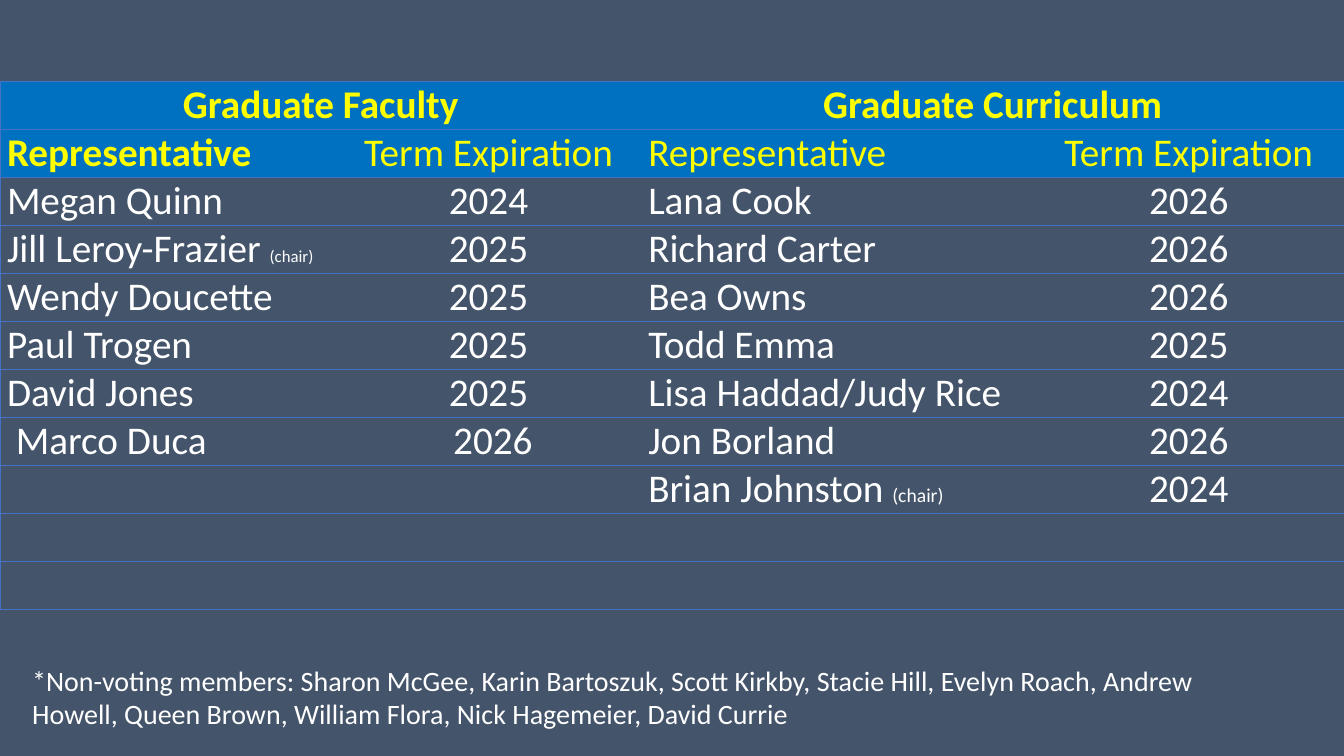
from lxml import etree
from pptx import Presentation
from pptx.dml.color import RGBColor
from pptx.enum.text import MSO_AUTO_SIZE, PP_ALIGN
from pptx.oxml.ns import qn
from pptx.util import Inches, Pt

LEFT, CENTER = PP_ALIGN.LEFT, PP_ALIGN.CENTER
FIT_SHAPE = MSO_AUTO_SIZE.SHAPE_TO_FIT_TEXT

SLATE = RGBColor(0x44, 0x54, 0x6A)
HEADER_BLUE = RGBColor(0x00, 0x70, 0xC0)
BORDER_BLUE = RGBColor(0x44, 0x72, 0xC4)
YELLOW = RGBColor(0xFF, 0xFF, 0x00)
WHITE = RGBColor(0xFF, 0xFF, 0xFF)

FONT = "Calibri"
TABLE_SIZE = 28
SLIDE_WIDTH, SLIDE_HEIGHT = 13.33, 7.5
TABLE_TOP, TABLE_HEIGHT = 0.81, 5.13
COLUMN_WIDTHS = (3.33, 3.03, 3.89, 3.08)
ROW_HEIGHT = 0.44
HEADER_ROWS = 2
CHAIR = "(chair)"

# A tuple holds a name, a small suffix and the size of that suffix
ROWS = [
    ("Graduate Faculty", "", "Graduate Curriculum", ""),
    ("Representative", "Term Expiration", "Representative", "Term Expiration"),
    ("Megan Quinn", "2024", "Lana Cook", "2026"),
    (("Jill Leroy-Frazier ", CHAIR, 12), "2025", "Richard Carter", "2026"),
    ("Wendy Doucette", "2025", "Bea Owns", "2026"),
    ("Paul Trogen", "2025", "Todd Emma", "2025"),
    ("David Jones", "2025", "Lisa Haddad/Judy Rice", "2024"),
    (" Marco Duca", " 2026", "Jon Borland", "2026"),
    ("", "", ("Brian Johnston ", CHAIR, 14), "2024"),
    ("", "", "", ""),
    ("", "", "", ""),
]
NON_VOTING = (
    "*Non-voting members: Sharon McGee, Karin Bartoszuk, Scott Kirkby, "
    "Stacie Hill, Evelyn Roach, Andrew Howell, Queen Brown, William Flora, "
    "Nick Hagemeier, David Currie"
)


def add_text(paragraph, text, size=TABLE_SIZE, color=WHITE, bold=False,
             align=LEFT):
    paragraph.alignment = align
    run = paragraph.add_run()
    run.text = text
    run.font.name = FONT
    run.font.size = Pt(size)
    run.font.bold = bold
    run.font.color.rgb = color


def set_borders(cell, visible_sides):
    """Draw the visible sides and switch off the table style's other lines."""
    properties = cell._tc.get_or_add_tcPr()
    for side in "LRTB":
        line = etree.SubElement(properties, qn(f"a:ln{side}"), w=str(Pt(0.5)))
        if side in visible_sides:
            fill = etree.SubElement(line, qn("a:solidFill"))
            etree.SubElement(fill, qn("a:srgbClr"), val=str(BORDER_BLUE))
        else:
            etree.SubElement(line, qn("a:noFill"))


def format_cell(cell, row, column):
    cell.margin_left = cell.margin_right = Inches(0.07)
    cell.margin_top = cell.margin_bottom = 0
    outer_side = {0: "L", len(COLUMN_WIDTHS) - 1: "R"}.get(column, "")
    set_borders(cell, "TB" + outer_side)
    if row < HEADER_ROWS:
        cell.fill.solid()
        cell.fill.fore_color.rgb = HEADER_BLUE
    else:
        cell.fill.background()


def fill_cell(cell, content, row, column):
    paragraph = cell.text_frame.paragraphs[0]
    if not content:
        # An empty cell keeps the line height of the filled ones
        ending = paragraph._p.get_or_add_endParaRPr()
        ending.set("sz", str(TABLE_SIZE * 100))
        return
    name, *suffix = content if isinstance(content, tuple) else (content,)
    add_text(
        paragraph, name,
        color=YELLOW if row < HEADER_ROWS else WHITE,
        bold=row == 0 or (row == 1 and column == 0),
        align=CENTER if row == 0 or column % 2 else LEFT,
    )
    if suffix:
        add_text(paragraph, suffix[0], size=suffix[1])


def add_committee_table(slide):
    frame = slide.shapes.add_table(
        len(ROWS), len(COLUMN_WIDTHS), 0, Inches(TABLE_TOP),
        Inches(SLIDE_WIDTH), Inches(TABLE_HEIGHT))
    table = frame.table
    table.first_row = table.horz_banding = False
    for column, width in zip(table.columns, COLUMN_WIDTHS):
        column.width = Inches(width)
    for table_row in table.rows:
        table_row.height = Inches(ROW_HEIGHT)
    frame.height = Inches(TABLE_HEIGHT)

    for row, contents in enumerate(ROWS):
        for column, content in enumerate(contents):
            cell = table.cell(row, column)
            format_cell(cell, row, column)
            fill_cell(cell, content, row, column)

    # Each committee title spans its two columns
    for column in (0, 2):
        table.cell(0, column).merge(table.cell(0, column + 1))


def add_footnote(slide):
    box = slide.shapes.add_textbox(
        Inches(0.22), Inches(6.53), Inches(12.35), Inches(0.77))
    box.text_frame.word_wrap = True
    box.text_frame.auto_size = FIT_SHAPE
    add_text(box.text_frame.paragraphs[0], NON_VOTING, size=20)


def main():
    presentation = Presentation()
    presentation.slide_width = Inches(SLIDE_WIDTH)
    presentation.slide_height = Inches(SLIDE_HEIGHT)
    slide = presentation.slides.add_slide(presentation.slide_layouts[6])

    # Background
    slide.background.fill.solid()
    slide.background.fill.fore_color.rgb = SLATE

    # Committees and the note below them
    add_committee_table(slide)
    add_footnote(slide)
    presentation.save("out.pptx")


if __name__ == "__main__":
    main()
